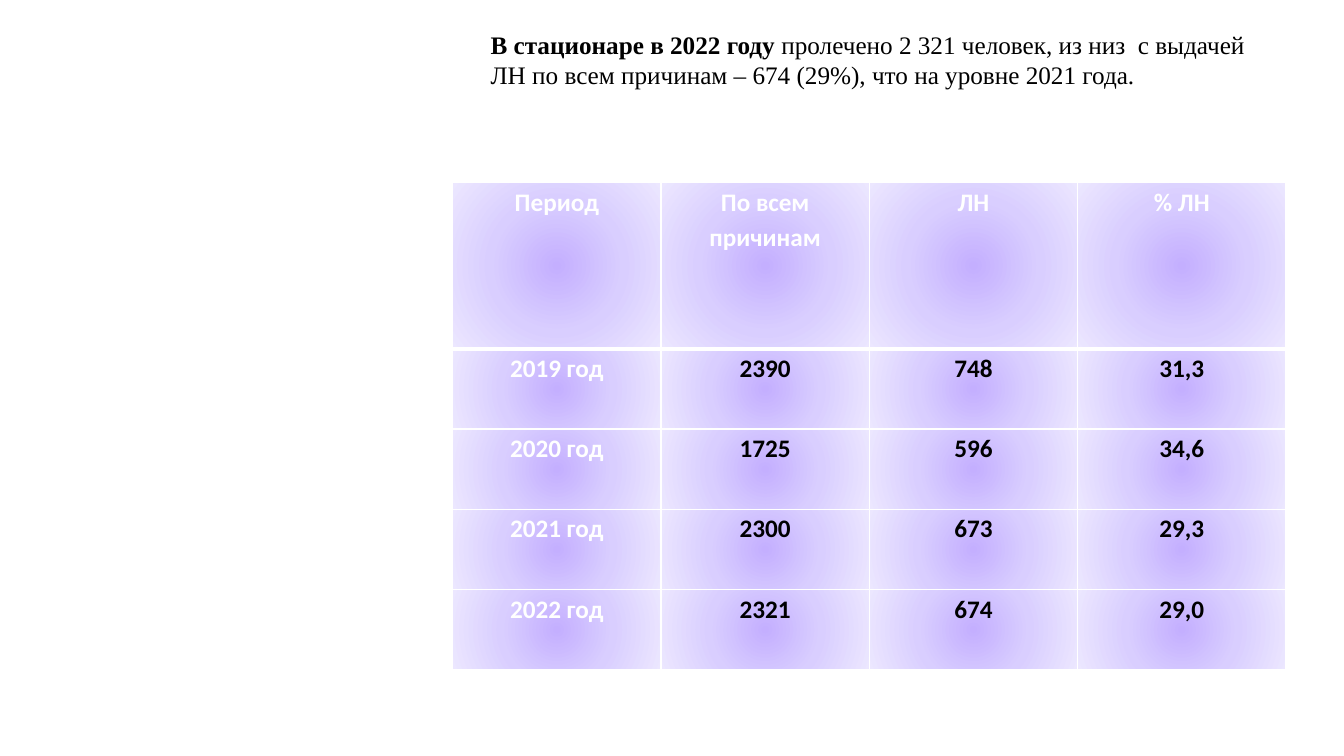
"""Slide on inpatient treatment and sick-leave certificates, 2019 to 2022."""
from pptx import Presentation
from pptx.dml.color import RGBColor
from pptx.enum.text import MSO_ANCHOR, PP_ALIGN
from pptx.oxml import parse_xml
from pptx.util import Pt

COLORS = {
    "text": "000000",
    "light": "FFFFFF",
    "core": "C4AFFF",
    "middle": "D9CEFF",
    "edge": "ECE7FF",
}
NAMESPACE = 'xmlns:a="http://schemas.openxmlformats.org/drawingml/2006/main"'


def format_font(font, name, color, bold):
    font.name = name
    font.size = Pt(18)
    font.bold = bold
    font.color.rgb = RGBColor.from_string(COLORS[color])


def decorate_cell(cell, bottom_width):
    properties = cell._tc.get_or_add_tcPr()
    for side, width in (("L", 1), ("R", 1), ("T", 1), ("B", bottom_width)):
        properties.append(parse_xml(
            f'<a:ln{side} {NAMESPACE} w="{Pt(width)}"><a:solidFill>'
            f'<a:srgbClr val="{COLORS["light"]}"/></a:solidFill></a:ln{side}>'))
    stops = "".join(
        f'<a:gs pos="{position * 1000}"><a:srgbClr val="{COLORS[color]}"/></a:gs>'
        for position, color in ((0, "core"), (50, "middle"), (100, "edge")))
    properties.append(parse_xml(
        f'<a:gradFill {NAMESPACE} rotWithShape="1"><a:gsLst>{stops}</a:gsLst>'
        '<a:path path="circle"><a:fillToRect l="50000" t="50000" r="50000" b="50000"/>'
        '</a:path></a:gradFill>'))


presentation = Presentation()
presentation.slide_width = Pt(960)
presentation.slide_height = Pt(540)
slide = presentation.slides.add_slide(presentation.slide_layouts[6])

ROWS = [
    ("Период", "По всем причинам", "ЛН", "% ЛН"),
    ("2019 год", "2390", "748", "31,3"),
    ("2020 год", "1725", "596", "34,6"),
    ("2021 год", "2300", "673", "29,3"),
    ("2022 год", "2321", "674", "29,0"),
]
periods = slide.shapes.add_table(
    len(ROWS), len(ROWS[0]), Pt(323.4), Pt(130.4), Pt(595.2), Pt(348)).table
periods.horz_banding = False
for column in periods.columns:
    column.width = Pt(148.8)
for row_index, values in enumerate(ROWS):
    is_header = row_index == 0
    periods.rows[row_index].height = Pt(118.8 if is_header else 57.3)
    for column_index, value in enumerate(values):
        cell = periods.cell(row_index, column_index)
        cell.margin_left = cell.margin_right = Pt(5)
        cell.margin_top = cell.margin_bottom = 0
        cell.text_frame.text = value
        paragraph = cell.text_frame.paragraphs[0]
        paragraph.alignment = PP_ALIGN.CENTER
        paragraph.line_spacing = 1.15
        color = "light" if is_header or column_index == 0 else "text"
        format_font(paragraph.runs[0].font, "Calibri", color, True)
        decorate_cell(cell, 3 if is_header else 1)

summary = slide.shapes.add_textbox(Pt(343.4), Pt(16), Pt(575.2), Pt(114)).text_frame
summary.word_wrap = True
summary.vertical_anchor = MSO_ANCHOR.TOP
summary.margin_top = Pt(5)
for wording, bold in (
    ("В стационаре в 2022 году ", True),
    ("пролечено 2 321 человек, из низ  с выдачей ЛН по всем причинам – 674 (29%), "
     "что на уровне 2021 года.", False),
):
    run = summary.paragraphs[0].add_run()
    run.text = wording
    format_font(run.font, "Times New Roman", "text", bold)

presentation.save("out.pptx")
